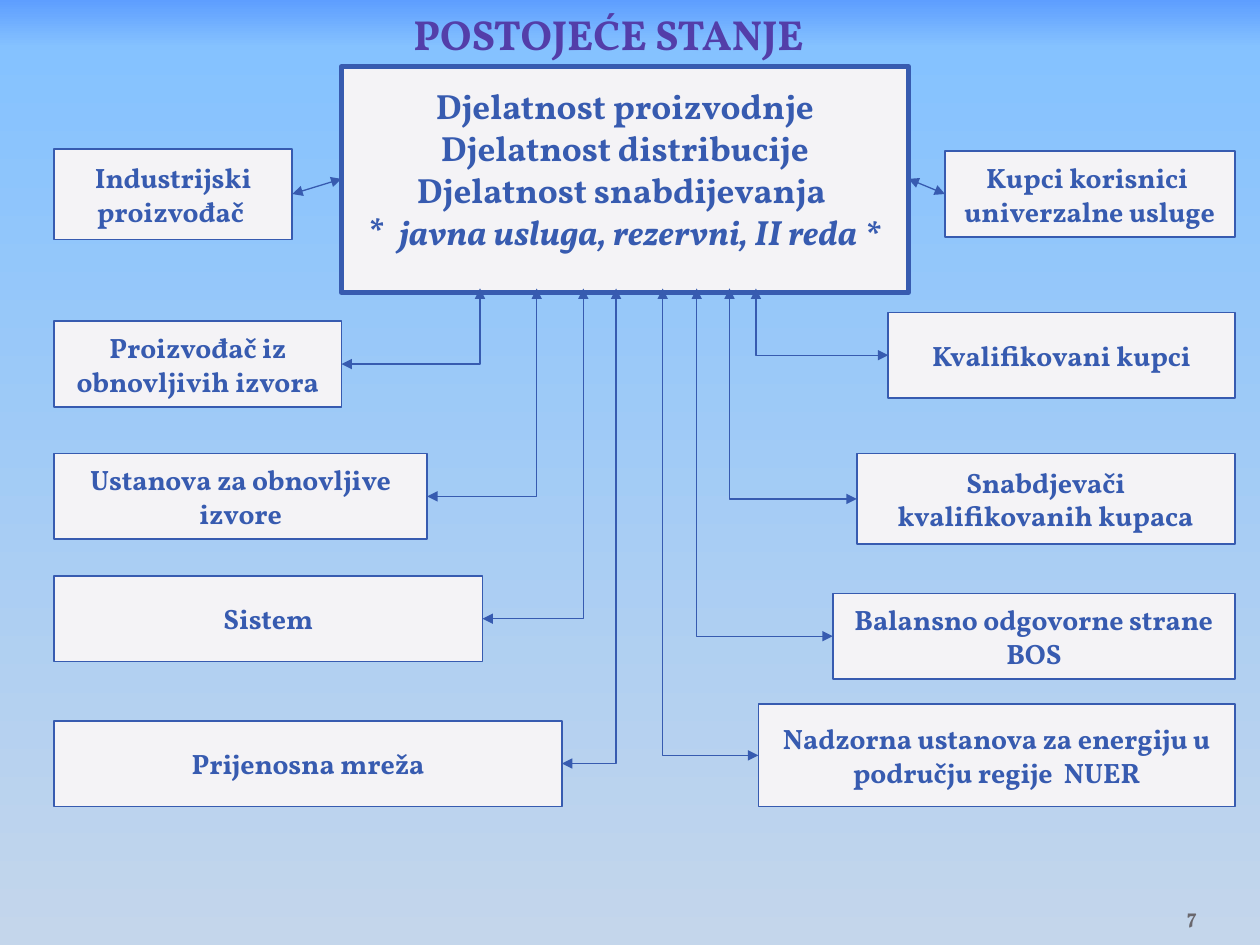
from lxml.etree import SubElement
from pptx import Presentation
from pptx.dml.color import RGBColor
from pptx.enum.shapes import MSO_CONNECTOR, MSO_SHAPE
from pptx.enum.text import MSO_ANCHOR, PP_ALIGN
from pptx.oxml import parse_xml
from pptx.oxml.ns import nsdecls, qn
from pptx.util import Inches, Pt

FONT = "Vollkorn"
COLORS = {"blue": "375BB0", "panel": "F4F3F6", "title": "533EA9", "number": "69676D"}
GRADIENT = [(0, "5E9EFF"), (5, "85C2FF"), (100, "C4D6EB")]

TITLE = "POSTOJEĆE STANJE"
PAGE_NUMBER = "7"
ACTIVITIES = [
    "Djelatnost proizvodnje",
    "Djelatnost distribucije",
    "Djelatnost snabdijevanja ",
    "*  javna usluga, rezervni, II reda *",
]
LEFT_EDGE, RIGHT_EDGE = 0.43, 9.8
CENTRE = (2.71, 0.53, 4.5, 1.79)
ARROW_TOP = 2.29
SIDE_ARROW_Y = 1.42

# lines of text, top, width, height, x of the vertical arrow (None: straight to the side)
LEFT_BOXES = [
    (["Industrijski proizvođač "], 1.18, 1.89, 0.72, None),
    (["Proizvođač iz obnovljivih izvora"], 2.55, 2.28, 0.68, 3.81),
    (["Ustanova za obnovljive izvore"], 3.6, 2.96, 0.68, 4.26),
    (["Sistem"], 4.57, 3.4, 0.68, 4.63),
    (["Prijenosna mreža"], 5.72, 4.03, 0.68, 4.89),
]
RIGHT_BOXES = [
    (["Kupci korisnici ", "univerzalne usluge"], 1.2, 2.3, 0.68, None),
    (["Kvalifikovani kupci"], 2.48, 2.75, 0.68, 6.0),
    (["Snabdjevači kvalifikovanih kupaca"], 3.6, 3.0, 0.72, 5.79),
    (["Balansno odgovorne strane BOS"], 4.71, 3.19, 0.68, 5.53),
    (["Nadzorna ustanova za energiju u području regije  NUER"], 5.59, 3.78, 0.81, 5.26),
]


def rgb(name):
    return RGBColor.from_string(COLORS[name])


def write(shape, lines, size, color, align=PP_ALIGN.CENTER, anchor=MSO_ANCHOR.MIDDLE):
    frame = shape.text_frame
    frame.word_wrap = True
    frame.vertical_anchor = anchor
    frame.text = "\n".join(lines)
    for para in frame.paragraphs:
        para.alignment = align
        for span in para.runs:
            style(span, size, color)
    return frame


def style(span, size, color):
    span.font.name = FONT
    span.font.size = Pt(size)
    span.font.bold = True
    span.font.color.rgb = rgb(color)


def add_box(page, place, lines, size=16, border=1):
    box = page.shapes.add_shape(MSO_SHAPE.FLOWCHART_PROCESS, *map(Inches, place))
    box.shadow.inherit = False
    box.fill.solid()
    box.fill.fore_color.rgb = rgb("panel")
    box.line.color.rgb = rgb("blue")
    box.line.width = Pt(border)
    return write(box, lines, size, "blue")


def add_label(page, place, *text):
    return write(page.shapes.add_textbox(*map(Inches, place)), *text)


def add_arrow(page, start, end, bent):
    """Double-headed arrow; a bent one leaves sideways and then turns up."""
    kind = MSO_CONNECTOR.ELBOW if bent else MSO_CONNECTOR.STRAIGHT
    arrow = page.shapes.add_connector(kind, *map(Inches, start + end))
    arrow.line.color.rgb = rgb("blue")
    arrow.line.width = Pt(0.75)
    properties = arrow._element.spPr
    if bent:
        properties.find(qn("a:prstGeom")).set("prst", "bentConnector2")
    for tag in ("a:headEnd", "a:tailEnd"):
        SubElement(properties.find(qn("a:ln")), qn(tag), type="triangle")
    SubElement(properties, qn("a:effectLst"))


def paint_background(page):
    stops = "".join(
        f'<a:gs pos="{share * 1000}"><a:srgbClr val="{color}"/></a:gs>'
        for share, color in GRADIENT
    )
    fill = page.background.fill
    fill.solid()
    solid = page._element.cSld.find(".//" + qn("a:solidFill"))
    solid.getparent().replace(solid, parse_xml(
        f'<a:gradFill {nsdecls("a")} rotWithShape="1"><a:gsLst>{stops}</a:gsLst>'
        '<a:lin ang="5400000" scaled="0"/></a:gradFill>'
    ))


def add_column(page, boxes, on_left):
    centre_left, _, centre_width, _ = CENTRE
    for lines, top, width, height, arrow_x in boxes:
        left = LEFT_EDGE if on_left else RIGHT_EDGE - width
        add_box(page, (left, top, width, height), lines)
        start = (left + width if on_left else left, top + height / 2)
        if arrow_x is None:
            side = centre_left if on_left else centre_left + centre_width
            add_arrow(page, start, (side, SIDE_ARROW_Y), bent=False)
        else:
            add_arrow(page, start, (arrow_x, ARROW_TOP), bent=True)


def main():
    deck = Presentation()
    deck.slide_width, deck.slide_height = Inches(10), Inches(7.5)
    page = deck.slides.add_slide(deck.slide_layouts[6])
    paint_background(page)

    centre = add_box(page, CENTRE, ACTIVITIES, size=20, border=3)
    centre.margin_bottom = Inches(0.23)
    note = centre.paragraphs[-1]
    star, service = note.runs[0], note.add_run()
    star.text, service.text = ACTIVITIES[-1][:3], ACTIVITIES[-1][3:]
    style(service, 20, "blue")
    service.font.italic = True

    add_column(page, LEFT_BOXES, on_left=True)
    add_column(page, RIGHT_BOXES, on_left=False)

    add_label(page, (-0.17, 0.02, 10, 0.5), [TITLE], 24, "title",
              PP_ALIGN.CENTER, MSO_ANCHOR.TOP)
    number = add_label(page, (8.67, 7.02, 0.83, 0.4), [PAGE_NUMBER], 12, "number",
                       PP_ALIGN.RIGHT, MSO_ANCHOR.BOTTOM)
    number.margin_left = number.margin_right = 0
    deck.save("out.pptx")


if __name__ == "__main__":
    main()
